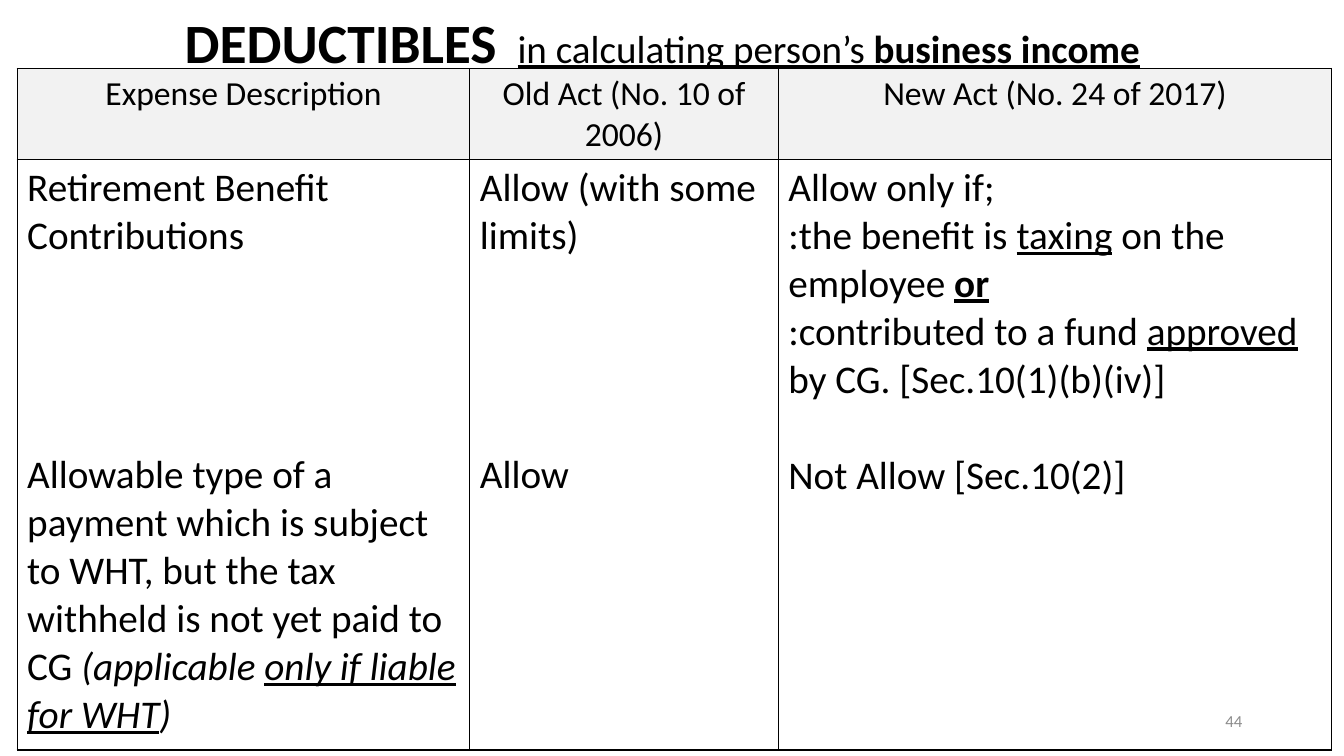
from pptx import Presentation
from pptx.dml.color import RGBColor
from pptx.enum import text
from pptx.oxml import parse_xml
from pptx.oxml.ns import nsdecls
from pptx.util import Inches, Pt

COLORS = {"ink": "000000", "header": "F2F2F2", "paper": "FFFFFF", "number": "8C8C8C"}
FONT = "Calibri"
BODY_SIZE = 28
BODY_LINE = 34.2
LEFT, CENTER, RIGHT = text.PP_ALIGN.LEFT, text.PP_ALIGN.CENTER, text.PP_ALIGN.RIGHT
TOP, MIDDLE = text.MSO_ANCHOR.TOP, text.MSO_ANCHOR.MIDDLE

HEADERS = ["Expense Description", "Old Act (No. 10 of 2006)", "New Act (No. 24 of 2017)"]
COLUMN_WIDTHS = [4.49, 3.06, 5.49]
ROW_HEIGHTS = [0.86, 5.86]

# Each cell lists (lines skipped before the paragraph, [(words, style), ...]).
RULES = [
    [
        (0, [("Retirement Benefit Contributions", "")]),
        (4, [("Allowable type of a payment which is subject to WHT, "
              "but the tax withheld is not yet paid to CG ", ""),
             ("(applicable ", "i"), ("only if liable for WHT", "iu"), (")", "i")]),
    ],
    [
        (0, [("Allow (with some limits)", "")]),
        (4, [("Allow", "")]),
    ],
    [
        (0, [("Allow only if;", "")]),
        (0, [(":the benefit is ", ""), ("taxing", "u"), (" on the employee ", ""), ("or", "bu")]),
        (0, [(":contributed to a fund ", ""), ("approved", "u"),
             (" by CG. [Sec.10(1)(b)(iv)]", "")]),
        (1, [("Not Allow [Sec.10(2)]", "")]),
    ],
]


def add_span(para, words, size, style="", color="ink"):
    span = para.add_run()
    span.text = words
    font = span.font
    font.name = FONT
    font.size = Pt(size)
    font.bold = "b" in style
    font.italic = "i" in style
    font.underline = "u" in style
    font.color.rgb = RGBColor.from_string(COLORS[color])


def add_text_box(page, left, top, width, height, align, anchor):
    box = page.shapes.add_textbox(Inches(left), Inches(top), Inches(width), Inches(height))
    frame = box.text_frame
    frame.word_wrap = True
    frame.vertical_anchor = anchor
    para = frame.paragraphs[0]
    para.alignment = align
    return para


def add_title(page):
    para = add_text_box(page, 0.17, -0.2, 12.8, 0.88, CENTER, TOP)
    para.line_spacing = 0.9
    add_span(para, "DEDUCTIBLES", 39.6, "b")
    add_span(para, " ", 64.8)
    add_span(para, "in calculating person’s ", 27.9, "u")
    add_span(para, "business income", 27.9, "bu")


def style_cell(cell, color):
    cell.fill.solid()
    cell.fill.fore_color.rgb = RGBColor.from_string(COLORS[color])
    properties = cell._tc.get_or_add_tcPr()
    for position, side in enumerate(("lnL", "lnR", "lnT", "lnB")):
        properties.insert(position, parse_xml(
            f'<a:{side} {nsdecls("a")} w="12700"><a:solidFill>'
            f'<a:srgbClr val="{COLORS["ink"]}"/></a:solidFill></a:{side}>'))


def fill_rule(cell, paragraphs):
    frame = cell.text_frame
    for index, (skipped, spans) in enumerate(paragraphs):
        para = frame.add_paragraph() if index else frame.paragraphs[0]
        para.alignment = LEFT
        if skipped:
            para.space_before = Pt(skipped * BODY_LINE)
        for words, style in spans:
            add_span(para, words, BODY_SIZE, style)


def add_rules_table(page):
    table = page.shapes.add_table(
        len(ROW_HEIGHTS), len(COLUMN_WIDTHS), Inches(0.17), Inches(0.68),
        Inches(sum(COLUMN_WIDTHS)), Inches(sum(ROW_HEIGHTS))).table
    table.first_row = False
    table.horz_banding = False
    for row, height in zip(table.rows, ROW_HEIGHTS):
        row.height = Inches(height)
    for index, width in enumerate(COLUMN_WIDTHS):
        table.columns[index].width = Inches(width)
        header, rule = table.cell(0, index), table.cell(1, index)
        style_cell(header, "header")
        style_cell(rule, "paper")
        para = header.text_frame.paragraphs[0]
        para.alignment = CENTER
        add_span(para, HEADERS[index], 24)
        fill_rule(rule, RULES[index])


def add_page_number(page):
    para = add_text_box(page, 9.42, 6.95, 3, 0.4, RIGHT, MIDDLE)
    add_span(para, "44", 12, color="number")


def main():
    deck = Presentation()
    deck.slide_width, deck.slide_height = Inches(13.33), Inches(7.5)
    page = deck.slides.add_slide(deck.slide_layouts[6])
    add_title(page)
    add_rules_table(page)
    add_page_number(page)
    deck.save("out.pptx")


if __name__ == "__main__":
    main()
